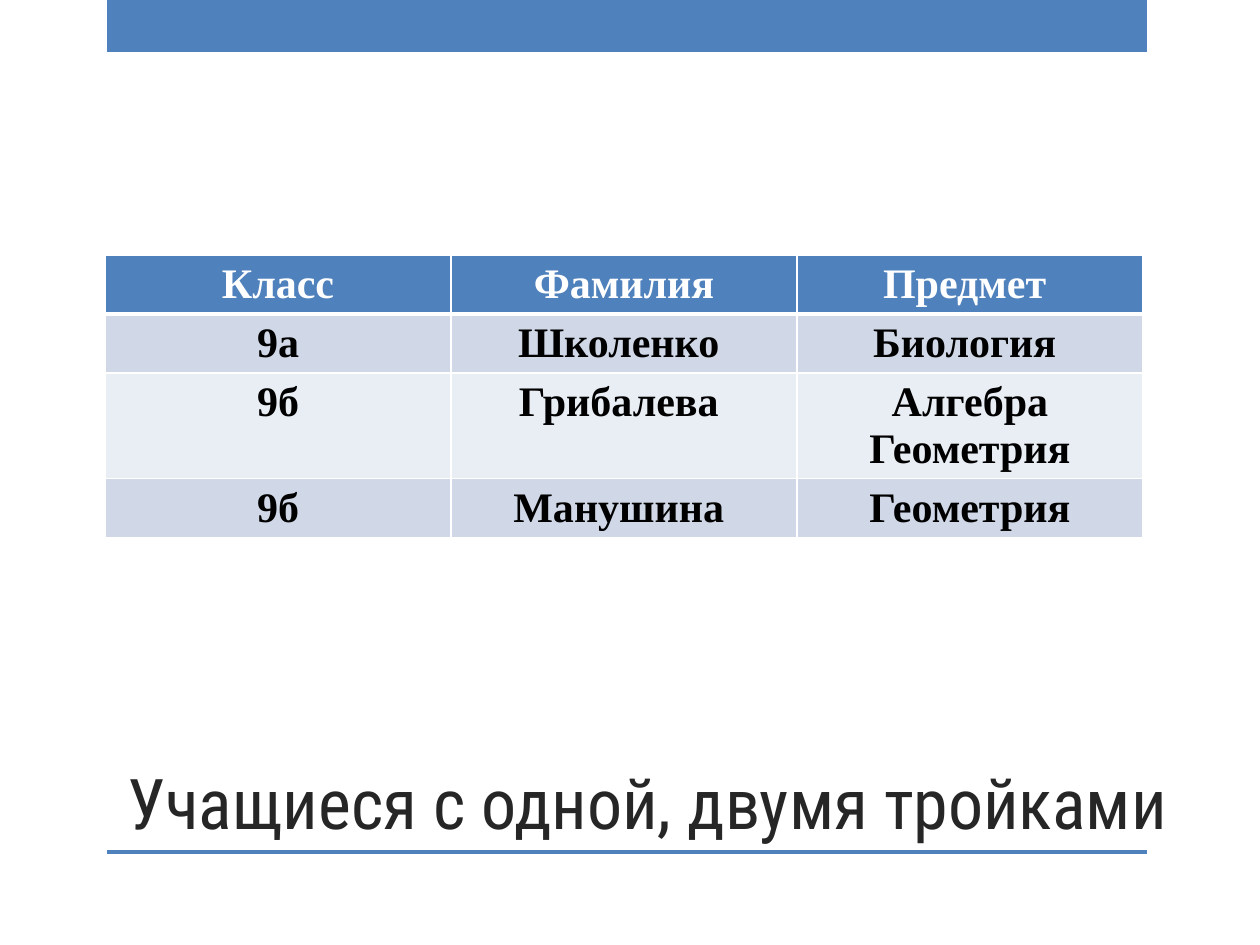
from lxml.etree import fromstring
from pptx import Presentation
from pptx.dml.color import RGBColor
from pptx.enum.shapes import MSO_SHAPE as Shape
from pptx.enum.text import MSO_ANCHOR as Anchor, MSO_AUTO_SIZE as Fit, PP_ALIGN as Align
from pptx.util import Pt

PX = 914400 // 126
BLUE, PALE, LIGHT = "4F81BD", "D0D8E8", "E9EDF4"
WHITE, BLACK, GREY = "FFFFFF", "000000", "262626"
NS = "http://schemas.openxmlformats.org/drawingml/2006/main"
ROWS = [
    ["Класс", "Фамилия", "Предмет "],
    ["9а", "Школенко ", "Биология "],
    ["9б", "Грибалева ", "Алгебра\nГеометрия"],
    ["9б", "Манушина ", "Геометрия"],
]


def paint(fill, color):
    """Fill with one solid colour."""
    fill.solid()
    fill.fore_color.rgb = RGBColor.from_string(color)


def style(frame, font, size, color, bold=False):
    """Centre every paragraph and format its runs."""
    for para in frame.paragraphs:
        para.alignment = Align.CENTER
        for run in para.runs:
            run.font.name, run.font.size, run.font.bold = font, Pt(size), bold
            paint(run.font.fill, color)


def add_bar(slide, x, y, w, h):
    """Add a plain blue bar."""
    bar = slide.shapes.add_shape(Shape.RECTANGLE, x * PX, y * PX, w * PX, h * PX)
    bar.shadow.inherit = False
    paint(bar.fill, BLUE)
    bar.line.fill.background()


def set_title(slide, text, x, y, w, h):
    """Place and format the title."""
    title = slide.shapes.title
    title.left, title.top, title.width, title.height = x * PX, y * PX, w * PX, h * PX
    frame = title.text_frame
    frame.text = text
    frame.word_wrap, frame.auto_size = True, Fit.NONE
    frame.vertical_anchor = Anchor.BOTTOM
    style(frame, "Roboto Condensed", 40, GREY)


def set_edges(cell, **widths):
    """Draw white cell edges with widths in points."""
    props = cell._tc.get_or_add_tcPr()
    for spot, side in enumerate("LRTB"):
        width = Pt(widths.get(side, 1))
        props.insert(spot, fromstring(
            f'<a:ln{side} xmlns:a="{NS}" w="{width}"><a:solidFill>'
            f'<a:srgbClr val="{WHITE}"/></a:solidFill></a:ln{side}>'))


def add_grid(slide, rows, x, y, w, h):
    """Add the table with a blue head and banded rows."""
    table = slide.shapes.add_table(
        len(rows), len(rows[0]), x * PX, y * PX, w * PX, h * PX).table
    for i, row in enumerate(rows):
        color = BLUE if i == 0 else PALE if i % 2 else LIGHT
        for j, text in enumerate(row):
            cell = table.cell(i, j)
            cell.text_frame.text = text
            style(cell.text_frame, "Times New Roman", 24, BLACK if i else WHITE, True)
            paint(cell.fill, color)
            set_edges(cell, T=3 if i == 1 else 1, B=1 if i else 3)


def main():
    """Build and save the slide."""
    deck = Presentation()
    deck.slide_width, deck.slide_height = 1260 * PX, 945 * PX
    slide = deck.slides.add_slide(deck.slide_layouts[5])
    add_bar(slide, 107, 0, 1040, 52)
    add_bar(slide, 107, 850, 1040, 4)
    set_title(slide, "Учащиеся с одной, двумя тройками", 35, 630, 1225, 220)
    add_grid(slide, ROWS, 105, 255, 1038, 208)
    deck.save("out.pptx")


if __name__ == "__main__":
    main()
